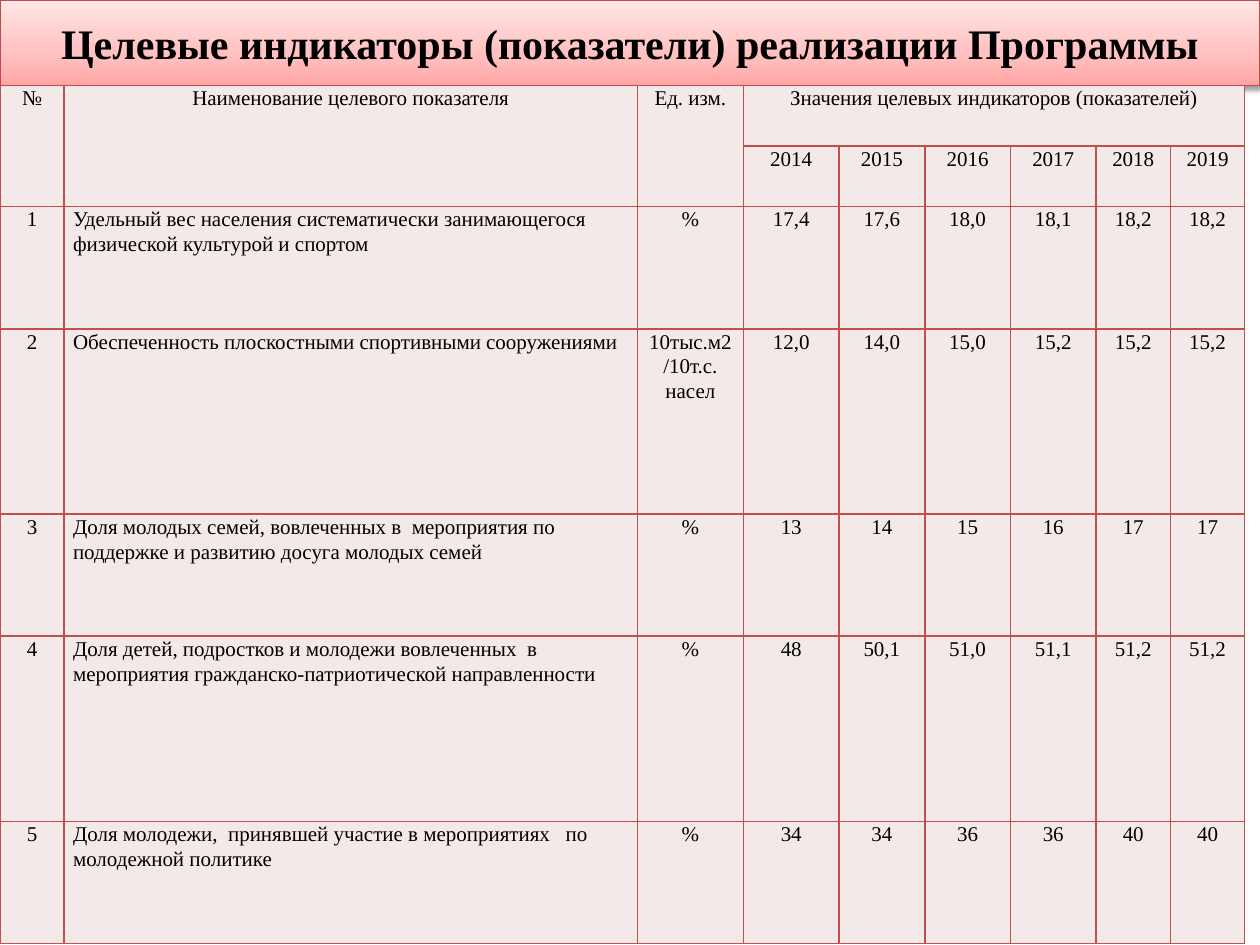
from lxml import etree
from pptx import Presentation
from pptx.dml.color import RGBColor
from pptx.enum import shapes, text
from pptx.oxml import parse_xml
from pptx.oxml.ns import nsdecls, qn
from pptx.util import Inches, Pt

COLORS = {"text": "000000", "cell": "F4E9E9", "border": "C0504D", "title_line": "BF4C48"}
TITLE_STOPS = [(0, "FFA6A5"), (35, "FFC0BF"), (100, "FFE7E7")]
FONT = "Times New Roman"
TITLE_HEIGHT = 0.68

TITLE = "Целевые индикаторы (показатели) реализации Программы"
HEADERS = ["№", "Наименование целевого показателя", "Ед. изм.",
           "Значения целевых индикаторов (показателей)"]
YEARS = ["2014", "2015", "2016", "2017", "2018", "2019"]
INDICATORS = [
    ("Удельный вес населения систематически занимающегося физической культурой и спортом",
     "%", ["17,4", "17,6", "18,0", "18,1", "18,2", "18,2"]),
    ("Обеспеченность плоскостными спортивными сооружениями",
     "10тыс.м2/10т.с. насел", ["12,0", "14,0", "15,0", "15,2", "15,2", "15,2"]),
    ("Доля молодых семей, вовлеченных в  мероприятия по поддержке и развитию досуга молодых семей",
     "%", ["13", "14", "15", "16", "17", "17"]),
    ("Доля детей, подростков и молодежи вовлеченных  в мероприятия "
     "гражданско-патриотической направленности",
     "%", ["48", "50,1", "51,0", "51,1", "51,2", "51,2"]),
    ("Доля молодежи,  принявшей участие в мероприятиях   по молодежной политике",
     "%", ["34", "34", "36", "36", "40", "40"]),
]
COLUMN_WIDTHS = [0.51, 4.55, 0.84, 0.76, 0.68, 0.68, 0.68, 0.59, 0.59]
ROW_HEIGHTS = [0.48, 0.48, 0.97, 1.47, 0.97, 1.47, 0.97]
NAME_COLUMN, FIRST_YEAR_COLUMN = 1, 3


def rgb(name):
    return RGBColor.from_string(COLORS[name])


def write(frame, content, size=12, bold=False, align=text.PP_ALIGN.CENTER, spacing=None):
    frame.word_wrap = True
    paragraph = frame.paragraphs[0]
    paragraph.alignment = align
    paragraph.line_spacing = spacing
    run = paragraph.add_run()
    run.text = content
    run.font.name = FONT
    run.font.size = Pt(size)
    run.font.bold = bold
    run.font.color.rgb = rgb("text")


def add_title(slide):
    shape = slide.shapes.add_shape(shapes.MSO_SHAPE.RECTANGLE, 0, 0,
                                   Inches(10), Inches(TITLE_HEIGHT))
    shape.line.color.rgb = rgb("title_line")
    shape.line.width = Pt(0.75)
    shape.fill.gradient()
    shape.fill.gradient_angle = 90
    properties = shape._element.spPr
    stops = properties.find(".//" + qn("a:gsLst"))
    for stop in list(stops):
        stops.remove(stop)
    for percent, color in TITLE_STOPS:
        stop = etree.SubElement(stops, qn("a:gs"), pos=str(percent * 1000))
        etree.SubElement(stop, qn("a:srgbClr"), val=color)
    shape.shadow.inherit = False
    properties.find(qn("a:effectLst")).append(parse_xml(
        f'<a:outerShdw {nsdecls("a")} blurRad="{Pt(3.1)}" dist="{Pt(1.6)}" dir="5400000" '
        'rotWithShape="0"><a:srgbClr val="000000"><a:alpha val="38000"/></a:srgbClr>'
        '</a:outerShdw>'))
    shape.text_frame.vertical_anchor = text.MSO_ANCHOR.MIDDLE
    write(shape.text_frame, TITLE, size=24, bold=True)


def style_cell(cell):
    properties = cell._tc.get_or_add_tcPr()
    for side in ("lnL", "lnR", "lnT", "lnB"):
        properties.append(parse_xml(
            f'<a:{side} {nsdecls("a")} w="{Pt(1)}"><a:solidFill>'
            f'<a:srgbClr val="{COLORS["border"]}"/></a:solidFill></a:{side}>'))
    cell.fill.solid()
    cell.fill.fore_color.rgb = rgb("cell")
    cell.margin_left = cell.margin_right = Inches(0.07)
    cell.margin_top = cell.margin_bottom = 0


def add_indicator_table(slide):
    table = slide.shapes.add_table(
        len(ROW_HEIGHTS), len(COLUMN_WIDTHS), 0, Inches(TITLE_HEIGHT),
        Inches(sum(COLUMN_WIDTHS)), Inches(sum(ROW_HEIGHTS))).table
    for column, width in zip(table.columns, COLUMN_WIDTHS):
        column.width = Inches(width)
    for row, height in zip(table.rows, ROW_HEIGHTS):
        row.height = Inches(height)
    for cell in table.iter_cells():
        style_cell(cell)
    for column in range(FIRST_YEAR_COLUMN):
        table.cell(0, column).merge(table.cell(1, column))
    table.cell(0, FIRST_YEAR_COLUMN).merge(table.cell(0, len(COLUMN_WIDTHS) - 1))

    rows = [HEADERS, [""] * FIRST_YEAR_COLUMN + YEARS]
    rows += [[str(number), name, unit, *values]
             for number, (name, unit, values) in enumerate(INDICATORS, 1)]
    for row, contents in enumerate(rows):
        for column, content in enumerate(contents):
            if content:
                is_name = row > 1 and column == NAME_COLUMN
                align = text.PP_ALIGN.LEFT if is_name else text.PP_ALIGN.CENTER
                write(table.cell(row, column).text_frame, content, align=align, spacing=1.07)


def main():
    presentation = Presentation()
    presentation.slide_width = Inches(10)
    presentation.slide_height = Inches(7.5)
    slide = presentation.slides.add_slide(presentation.slide_layouts[6])
    add_title(slide)
    add_indicator_table(slide)
    presentation.save("out.pptx")


if __name__ == "__main__":
    main()
